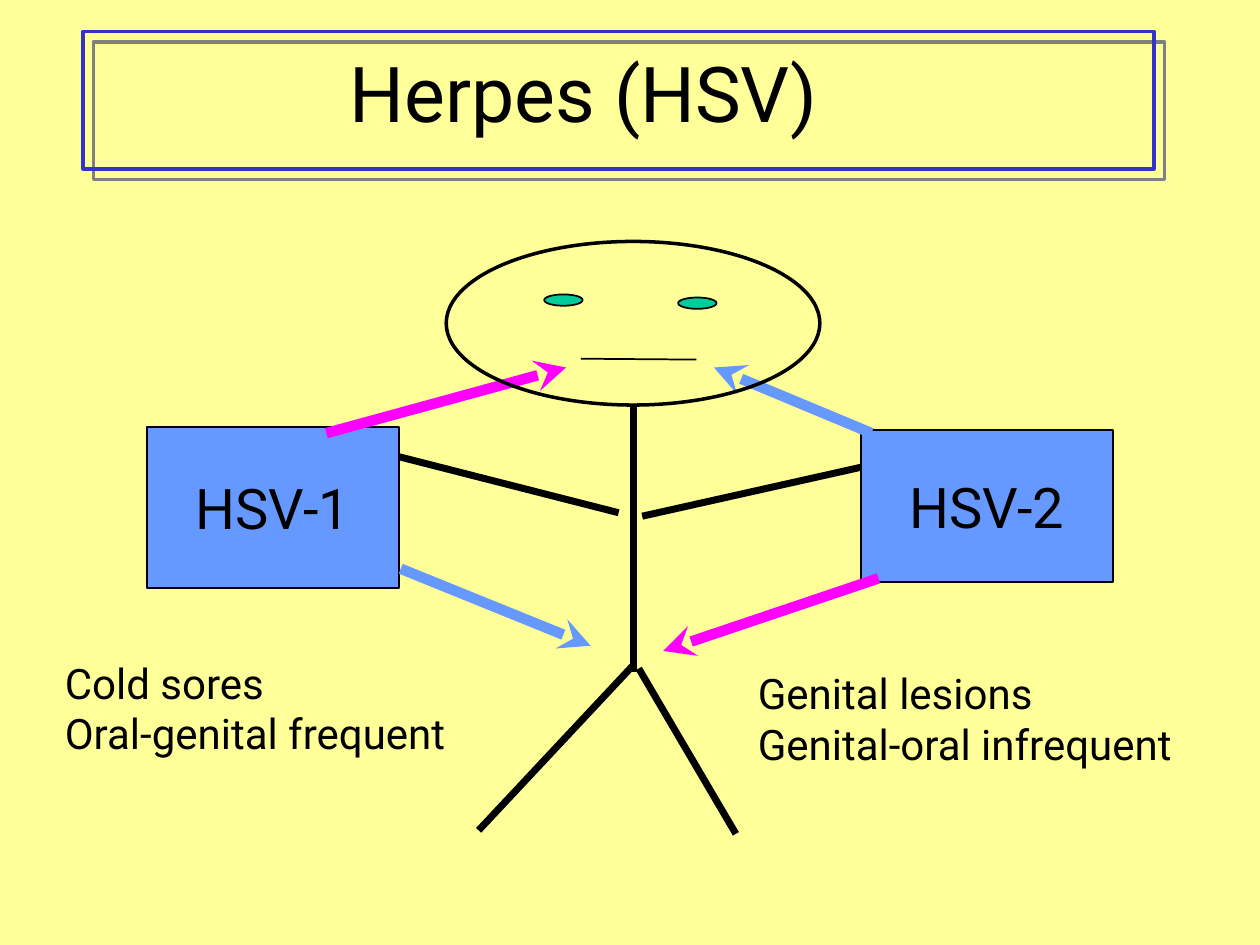
from lxml import etree
from pptx import Presentation
from pptx.dml.color import RGBColor
from pptx.enum.shapes import MSO_CONNECTOR, MSO_SHAPE
from pptx.enum.text import MSO_ANCHOR, MSO_AUTO_SIZE, PP_ALIGN
from pptx.oxml.ns import qn
from pptx.util import Pt

LINE = MSO_CONNECTOR.STRAIGHT
RECT, OVAL = MSO_SHAPE.RECTANGLE, MSO_SHAPE.OVAL
TOP, MIDDLE = MSO_ANCHOR.TOP, MSO_ANCHOR.MIDDLE
LEFT, CENTER = PP_ALIGN.LEFT, PP_ALIGN.CENTER
NO_FIT = MSO_AUTO_SIZE.NONE
FONT = "Roboto"
COLORS = {
    "back": "FFFF99", "ink": "000000", "blue": "6699FF", "pink": "FF00FF",
    "green": "00CC99", "frame": "3333CC", "shade": "808080",
}

TITLE = ("Herpes (HSV)", (192.5, 22.5, 294, 60))
FRAME = (47.5, 18, 612, 78.5)
BOXES = [
    ("HSV-2", (492, 245.5, 144, 87)),
    ("HSV-1", (84, 244, 144, 92)),
]
ARROWS = [
    ("pink", (186.5, 247.5, 323.5, 210)),
    ("blue", (498, 247.5, 408, 210)),
    ("blue", (229, 325, 337.5, 369)),
    ("pink", (502, 330.5, 379, 372)),
]
HEAD = (255, 138, 213.5, 93.5)
EYES = [(311, 168.25, 22, 6.5), (387.5, 170, 22, 6.5)]
MOUTH = (332, 205, 398, 205.5)
LIMBS = [
    (362, 232, 362, 384),
    (362, 380, 273.5, 474.5),
    (365, 382, 420.5, 476.5),
    (367, 295, 492, 267),
    (353.5, 293, 228, 261),
]
NOTES = [
    ("Cold sores\vOral-genital frequent", (30, 372, 300, 65)),
    ("Genital lesions\vGenital-oral infrequent", (426, 378, 258, 65)),
]


def color(name):
    return RGBColor.from_string(COLORS[name])


def write(shape, text, size, align=LEFT, anchor=TOP, wrap=True):
    frame = shape.text_frame
    frame.text = text
    frame.word_wrap = wrap
    frame.auto_size = NO_FIT
    frame.vertical_anchor = anchor
    para = frame.paragraphs[0]
    para.alignment = align
    para.font.name = FONT
    para.font.size = Pt(size)
    para.font.color.rgb = color("ink")


def draw(shapes, kind, area, fill=None, line="ink", width=1):
    shape = shapes.add_shape(kind, *map(Pt, area))
    shape.shadow.inherit = False
    if fill:
        shape.fill.solid()
        shape.fill.fore_color.rgb = color(fill)
    else:
        shape.fill.background()
    shape.line.color.rgb = color(line)
    shape.line.width = Pt(width)
    return shape


def link(shapes, ends, width, tint="ink", arrow=False):
    line = shapes.add_connector(LINE, *map(Pt, ends))
    line.line.color.rgb = color(tint)
    line.line.width = Pt(width)
    props = line._element.spPr
    if arrow:
        etree.SubElement(props.find(qn("a:ln")), qn("a:tailEnd"), type="stealth")
    etree.SubElement(props, qn("a:effectLst"))


def shade(shape, gap):
    effects = shape._element.spPr.find(qn("a:effectLst"))
    shadow = etree.SubElement(
        effects, qn("a:outerShdw"), dist=str(Pt(gap)), dir="2700000",
        algn="ctr", rotWithShape="0")
    etree.SubElement(shadow, qn("a:srgbClr"), val=COLORS["shade"])


def main():
    deck = Presentation()
    deck.slide_width, deck.slide_height = Pt(720), Pt(540)
    slide = deck.slides.add_slide(deck.slide_layouts.get_by_name("Title Only"))
    slide.background.fill.solid()
    slide.background.fill.fore_color.rgb = color("back")
    shapes = slide.shapes

    title = shapes.title
    text, area = TITLE
    title.left, title.top, title.width, title.height = map(Pt, area)
    write(title, text, 44)

    for text, area in BOXES:
        box = draw(shapes, RECT, area, "blue")
        write(box, text, 32, CENTER, MIDDLE, False)
    for tint, ends in ARROWS:
        link(shapes, ends, 6, tint, True)

    body = shapes.add_group_shape().shapes
    draw(body, OVAL, HEAD, width=2)
    for ends in LIMBS:
        link(body, ends, 4)
    link(body, MOUTH, 1)
    for area in EYES:
        draw(body, OVAL, area, "green")

    shade(draw(shapes, RECT, FRAME, line="frame", width=2), 8.5)
    for text, area in NOTES:
        write(shapes.add_textbox(*map(Pt, area)), text, 24)
    deck.save("out.pptx")


if __name__ == "__main__":
    main()
